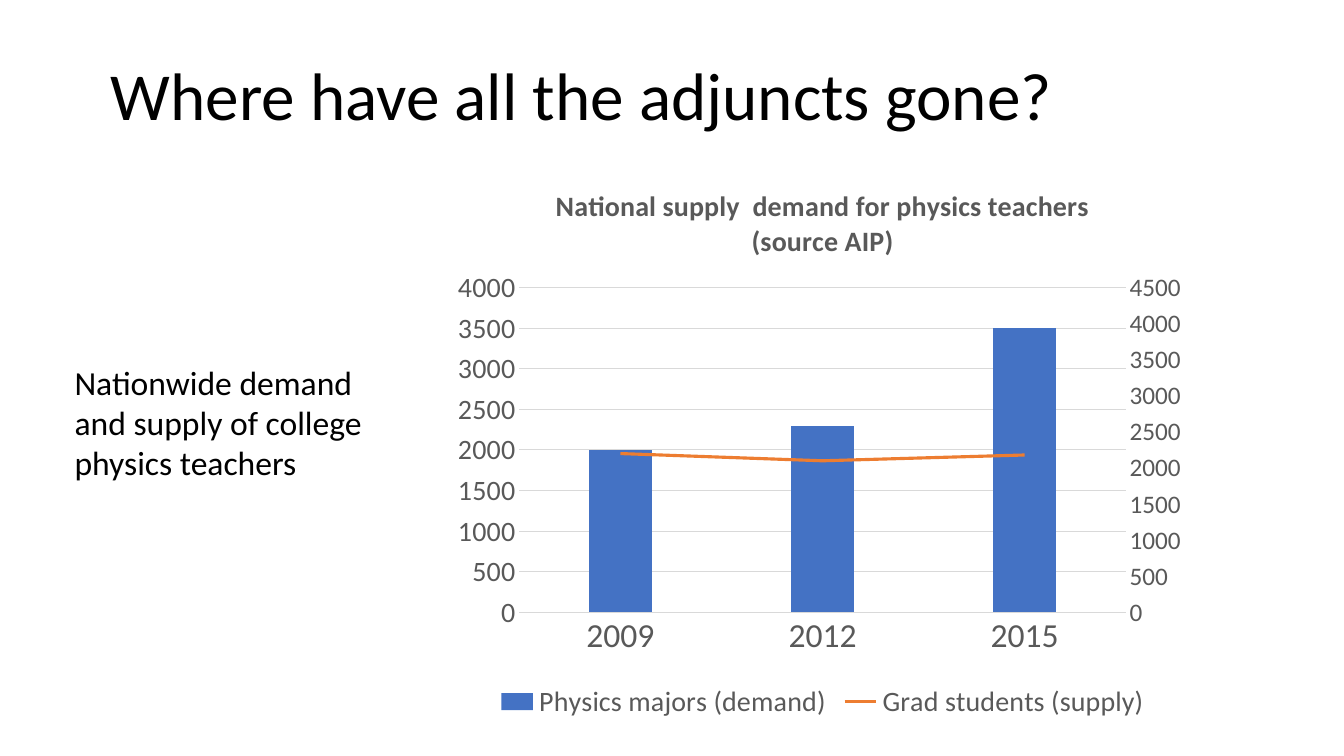
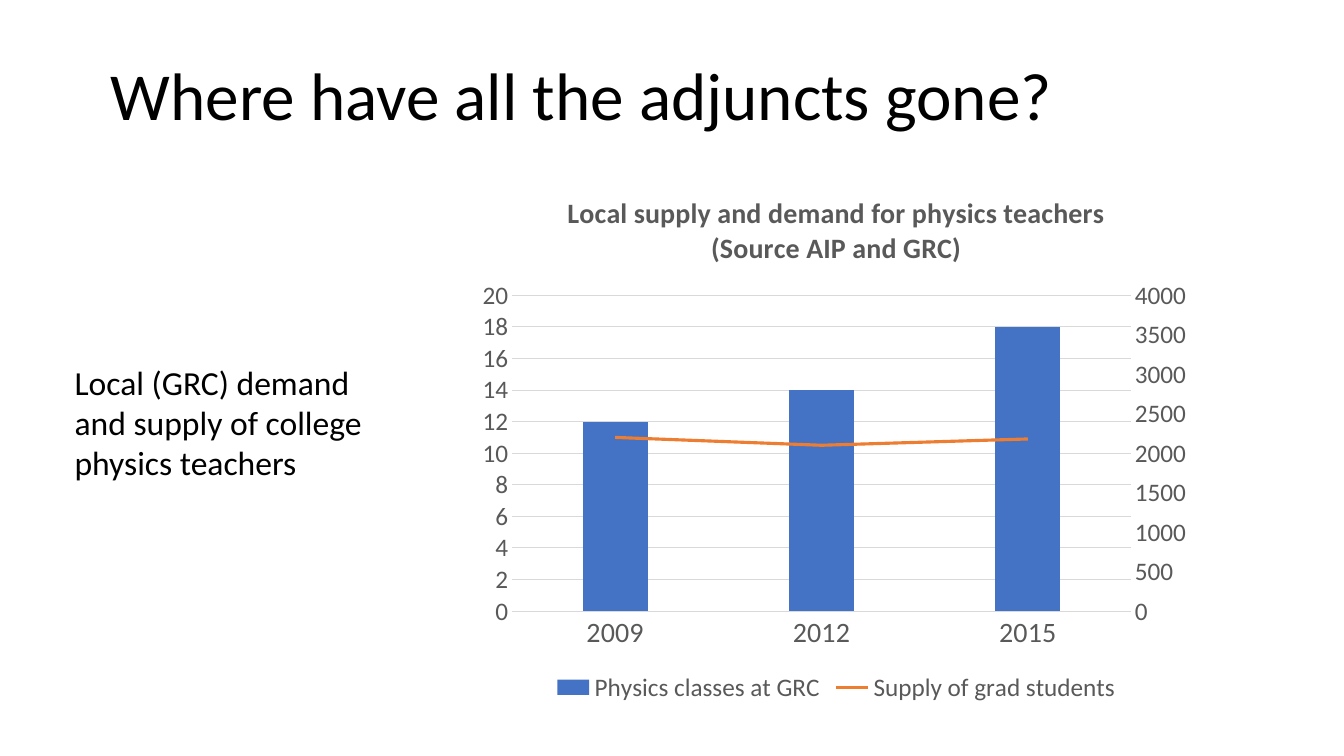
from copy import deepcopy

from lxml import etree
from pptx import Presentation
from pptx.chart.axis import ValueAxis
from pptx.chart.data import CategoryChartData
from pptx.dml.color import RGBColor
from pptx.enum.chart import XL_CHART_TYPE, XL_LEGEND_POSITION, XL_MARKER_STYLE, XL_TICK_MARK
from pptx.enum.text import MSO_AUTO_SIZE
from pptx.oxml import parse_xml
from pptx.oxml.ns import qn
from pptx.util import Cm, Pt

COLUMNS = XL_CHART_TYPE.COLUMN_CLUSTERED
BOTTOM = XL_LEGEND_POSITION.BOTTOM
NO_MARKER = XL_MARKER_STYLE.NONE
NO_TICK = XL_TICK_MARK.NONE
GROW = MSO_AUTO_SIZE.SHAPE_TO_FIT_TEXT

FONT = "Calibri"
COLORS = {"text": "000000", "label": "595959", "grid": "D9D9D9",
          "demand": "4472C4", "supply": "ED7D31"}
HEADING = "Where have all the adjuncts gone?"
HEADING_BOX = (2.54, 1.22, 27.2, 2.31)
CAPTION_BOX = (1.63, 8.99, 7.87, 3.33)
YEARS = ["2009", "2012", "2015"]
GRADUATES = [2200, 2100, 2180]

SLIDES = [
    {
        "caption": "Nationwide demand and supply of college physics teachers",
        "title": "National supply  demand for physics teachers (source AIP)",
        "box": (11.18, 4.14, 19.1, 14.12),
        "plot": {"x": 0.1, "y": 0.22, "w": 0.8, "h": 0.58},
        "demand": ("Physics majors (demand)", [2000, 2300, 3500]),
        "supply": ("Grad students (supply)", GRADUATES),
        "demand_scale": {"minimum_scale": 0, "maximum_scale": 4000, "major_unit": 500},
        "supply_scale": {"minimum_scale": 0, "maximum_scale": 4500, "major_unit": 500},
        "sizes": {"years": 24, "demand": 20, "supply": 18, "legend": 20},
    },
    {
        "caption": "Local (GRC) demand and supply of college physics teachers",
        "title": "Local supply and demand for physics teachers (Source AIP and GRC)",
        "box": (11.79, 4.34, 18.57, 13.49),
        "plot": {"x": 0.06, "y": 0.23, "w": 0.84, "h": 0.59},
        "demand": ("Physics classes at GRC", [12, 14, 18]),
        "supply": ("Supply of grad students", GRADUATES),
        "demand_scale": {"minimum_scale": 0, "maximum_scale": 20, "major_unit": 2},
        "supply_scale": {"minimum_scale": 0, "maximum_scale": 4000, "major_unit": 500},
        "sizes": {"years": 20, "demand": 18, "supply": 18, "legend": 18},
    },
]

CHART_NS = 'xmlns:c="http://schemas.openxmlformats.org/drawingml/2006/chart"'
SUPPLY_IDS = {"catAx": "50010", "valAx": "50020"}


def rgb(name):
    return RGBColor.from_string(COLORS[name])


def set_all(target, values):
    for name, value in values.items():
        setattr(target, name, value)


def set_font(font, size, color, bold=False):
    set_all(font, {"name": FONT, "size": Pt(size), "bold": bold})
    font.color.rgb = rgb(color)


def set_line(line, color, width):
    line.color.rgb = rgb(color)
    line.width = Pt(width)


def add_text(slide, text, box, size):
    frame = slide.shapes.add_textbox(*map(Cm, box)).text_frame
    set_all(frame, {"word_wrap": True, "auto_size": GROW, "text": text})
    set_font(frame.paragraphs[0].runs[0].font, size, "text")


def place_plot(plot_area, fractions):
    for layout in plot_area.findall(qn("c:layout")):
        plot_area.remove(layout)
    modes = '<c:layoutTarget val="inner"/><c:xMode val="edge"/><c:yMode val="edge"/>'
    sides = "".join(f'<c:{side} val="{value}"/>' for side, value in fractions.items())
    plot_area.insert(0, parse_xml(
        f"<c:layout {CHART_NS}><c:manualLayout>{modes}{sides}</c:manualLayout></c:layout>"))


def move_supply_to_line(plot_area):
    columns = plot_area.find(qn("c:barChart"))
    supply = columns.findall(qn("c:ser"))[1]
    for invert in supply.findall(qn("c:invertIfNegative")):
        supply.remove(invert)
    line_chart = parse_xml(
        f'<c:lineChart {CHART_NS}><c:grouping val="standard"/><c:varyColors val="0"/>'
        '<c:marker val="1"/></c:lineChart>')
    line_chart.insert(2, supply)
    for axis_id in SUPPLY_IDS.values():
        etree.SubElement(line_chart, qn("c:axId")).set("val", axis_id)
    columns.addnext(line_chart)


def add_supply_axis(plot_area):
    values = plot_area.find(qn("c:valAx"))
    right = deepcopy(values)
    hidden = deepcopy(plot_area.find(qn("c:catAx")))
    values.addnext(right)
    right.addnext(hidden)
    for axis, own, other in ((right, "valAx", "catAx"), (hidden, "catAx", "valAx")):
        axis.find(qn("c:axId")).set("val", SUPPLY_IDS[own])
        axis.find(qn("c:crossAx")).set("val", SUPPLY_IDS[other])
    right.find(qn("c:axPos")).set("val", "r")
    right.find(qn("c:crosses")).set("val", "max")
    hidden.find(qn("c:delete")).set("val", "1")
    return ValueAxis(right)


def add_supply_demand_chart(slide, content):
    data = CategoryChartData()
    data.categories = YEARS
    for role in ("demand", "supply"):
        data.add_series(*content[role])
    chart = slide.shapes.add_chart(COLUMNS, *map(Cm, content["box"]), data).chart
    sizes = content["sizes"]
    set_font(chart.font, 10, "text")

    chart.has_title = True
    title = chart.chart_title.text_frame
    title.text = content["title"]
    set_font(title.paragraphs[0].runs[0].font, 20, "label", bold=True)

    chart.has_legend = True
    set_all(chart.legend, {"position": BOTTOM, "include_in_layout": False})
    set_font(chart.legend.font, sizes["legend"], "label")

    years, demand = chart.category_axis, chart.value_axis
    for axis in (years, demand):
        set_all(axis, {"major_tick_mark": NO_TICK, "minor_tick_mark": NO_TICK})
    set_line(years.format.line, "grid", 0.75)
    set_line(demand.major_gridlines.format.line, "grid", 0.75)
    demand.format.line.fill.background()

    plot_area = chart.element.find(f".//{qn('c:plotArea')}")
    place_plot(plot_area, content["plot"])
    move_supply_to_line(plot_area)
    supply = add_supply_axis(plot_area)
    supply.has_major_gridlines = False
    set_all(demand, content["demand_scale"])
    set_all(supply, content["supply_scale"])
    for role, axis in (("years", years), ("demand", demand), ("supply", supply)):
        set_font(axis.tick_labels.font, sizes[role], "label")

    columns, line = chart.plots
    set_all(columns, {"gap_width": 219, "vary_by_categories": False})
    bars, curve = columns.series[0], line.series[0]
    bars.format.fill.solid()
    bars.format.fill.fore_color.rgb = rgb("demand")
    set_line(curve.format.line, "supply", 2.25)
    curve.marker.style = NO_MARKER
    curve.smooth = False


def main():
    deck = Presentation()
    set_all(deck, {"slide_width": Cm(33.87), "slide_height": Cm(19.05)})
    for content in SLIDES:
        slide = deck.slides.add_slide(deck.slide_layouts[6])
        add_text(slide, HEADING, HEADING_BOX, 48)
        add_supply_demand_chart(slide, content)
        add_text(slide, content["caption"], CAPTION_BOX, 24)
    deck.save("out.pptx")


if __name__ == "__main__":
    main()
